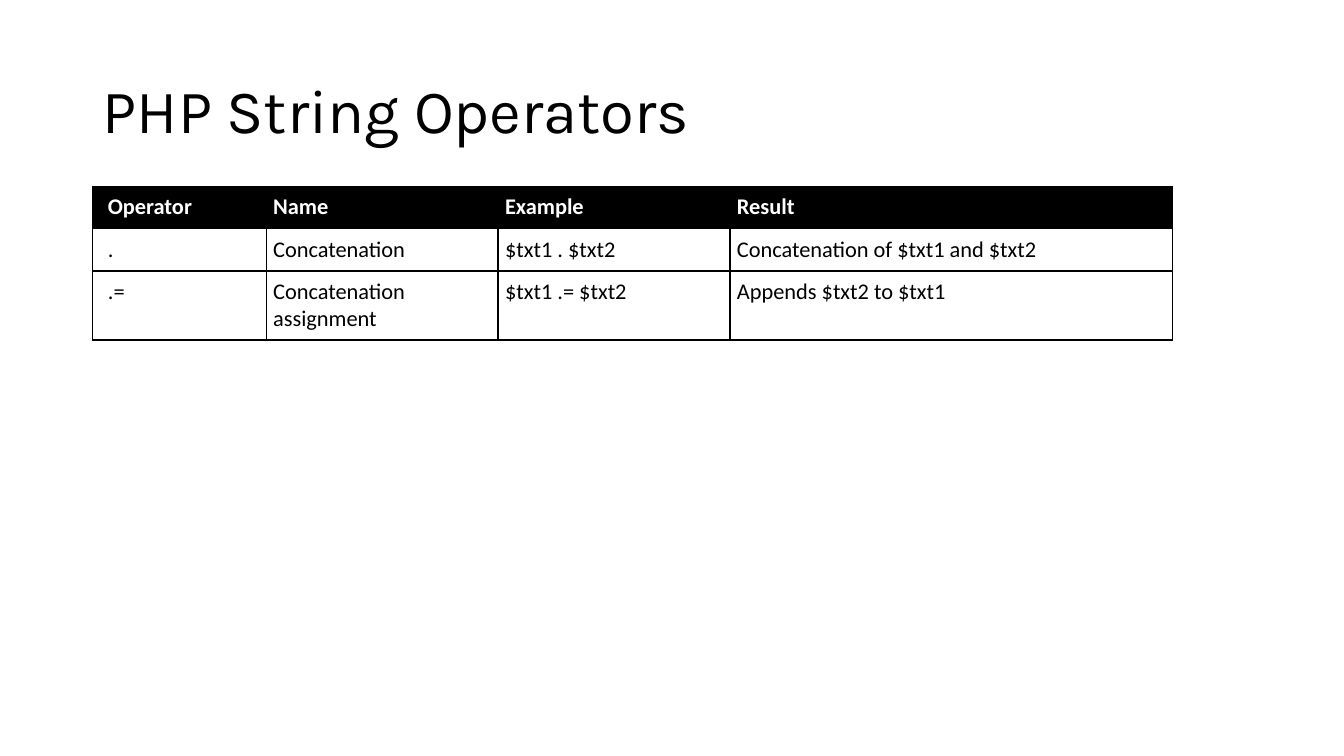
import pptx
import pptx.dml.color
import pptx.enum.text
import pptx.oxml
import pptx.oxml.ns
import pptx.util

Inches = pptx.util.Inches
Pt = pptx.util.Pt
BLACK = pptx.dml.color.RGBColor(0x00, 0x00, 0x00)
WHITE = pptx.dml.color.RGBColor(0xFF, 0xFF, 0xFF)

COLUMN_WIDTHS = [1.72, 2.3, 2.3, 4.39]
ROW_HEIGHTS = [0.42, 0.42, 0.68]
OPERATORS = [
    ["Operator", "Name", "Example", "Result"],
    [".", "Concatenation", "$txt1 . $txt2", "Concatenation of $txt1 and $txt2"],
    [".=", "Concatenation assignment", "$txt1 .= $txt2", "Appends $txt2 to $txt1"],
]


def style_font(font, name, size, color, bold=False):
    """Set the typeface, size, colour and weight of a font."""
    font.name = name
    font.size = Pt(size)
    font.color.rgb = color
    font.bold = bold


def add_title(s, text, left, top, width, height):
    """Place and format the slide title in the given box."""
    sp = s.shapes.title
    sp.left, sp.top = Inches(left), Inches(top)
    sp.width, sp.height = Inches(width), Inches(height)
    tf = sp.text_frame
    tf.text = text
    tf.word_wrap = True
    tf.vertical_anchor = pptx.enum.text.MSO_ANCHOR.MIDDLE
    p = tf.paragraphs[0]
    p.alignment = pptx.enum.text.PP_ALIGN.LEFT
    p.line_spacing = 0.9
    style_font(p.runs[0].font, "Karla", 44, BLACK)


def add_borders(cell):
    """Draw a thin line on all four sides of a cell."""
    tcPr = cell._tc.get_or_add_tcPr()
    for side in ("lnL", "lnR", "lnT", "lnB"):
        tcPr.append(pptx.oxml.parse_xml(
            f'<a:{side} {pptx.oxml.ns.nsdecls("a")} w="{Pt(1)}"><a:solidFill>'
            f'<a:srgbClr val="{BLACK}"/></a:solidFill></a:{side}>'))


def format_cell(cell, text, is_header, is_first):
    """Fill one table cell with its text, margins, borders and colours."""
    cell.text = text
    cell.margin_left = Inches(0.15 if is_first else 0.07)
    cell.margin_right = cell.margin_top = cell.margin_bottom = Inches(0.07)
    add_borders(cell)
    cell.fill.solid()
    cell.fill.fore_color.rgb = BLACK if is_header else WHITE
    r = cell.text_frame.paragraphs[0].runs[0]
    style_font(r.font, "Calibri", 16, WHITE if is_header else BLACK, is_header)


def add_operator_table(s, left, top):
    """Place the table of operators with its top left corner at a point."""
    table = s.shapes.add_table(
        len(ROW_HEIGHTS), len(COLUMN_WIDTHS), Inches(left), Inches(top),
        Inches(sum(COLUMN_WIDTHS)), Inches(sum(ROW_HEIGHTS))).table
    table.horz_banding = False
    for column, width in zip(table.columns, COLUMN_WIDTHS):
        column.width = Inches(width)
    for i, (row, height) in enumerate(zip(table.rows, ROW_HEIGHTS)):
        row.height = Inches(height)
        for j, text in enumerate(OPERATORS[i]):
            format_cell(table.cell(i, j), text, i == 0, j == 0)


def main():
    """Build the slide and save it."""
    prs = pptx.Presentation()
    prs.slide_width, prs.slide_height = Inches(13.33), Inches(7.5)
    s = prs.slides.add_slide(prs.slide_layouts[5])
    add_title(s, "PHP String Operators", 0.92, 0.4, 11.5, 1.45)
    add_operator_table(s, 0.92, 1.85)
    prs.save("out.pptx")


if __name__ == "__main__":
    main()
